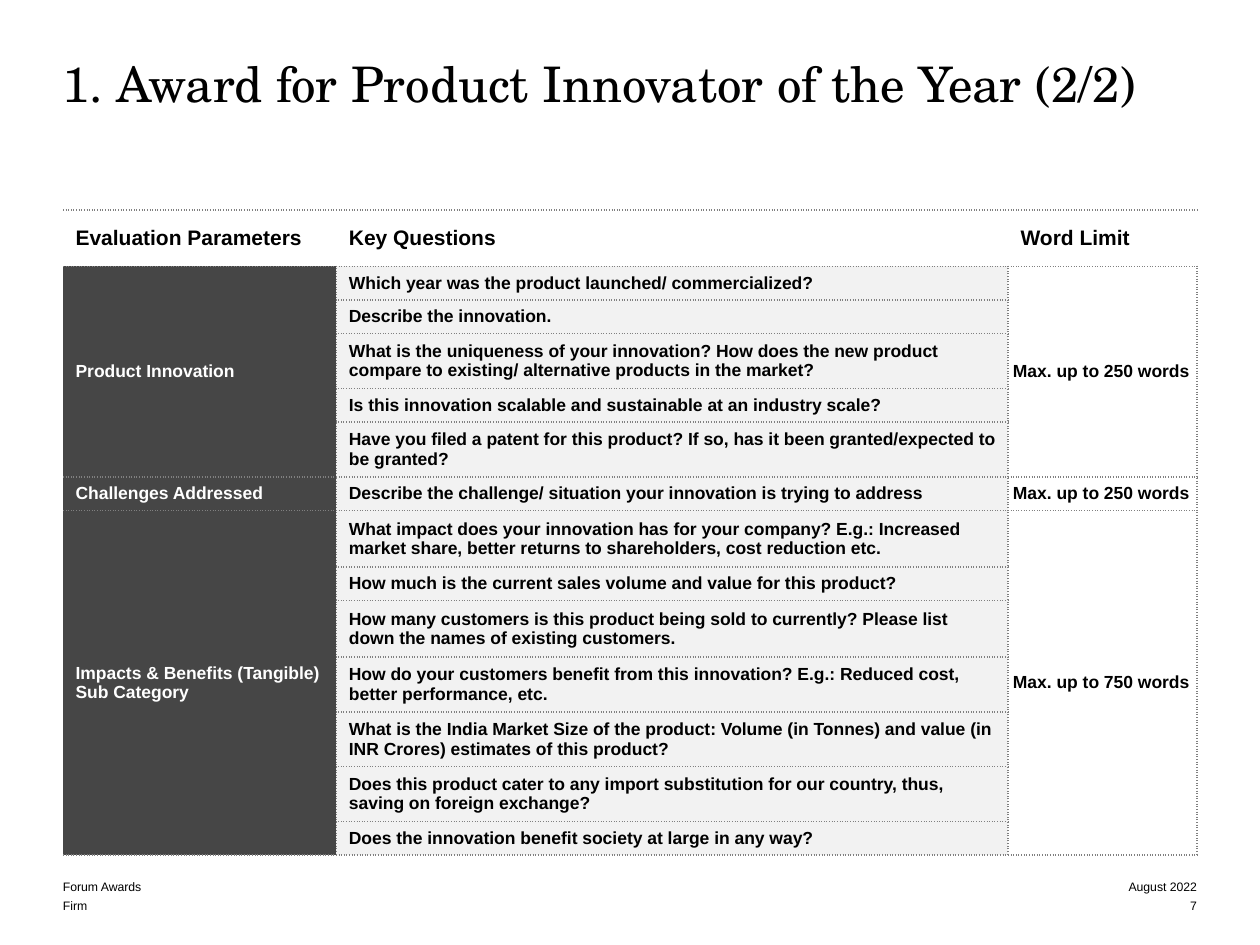
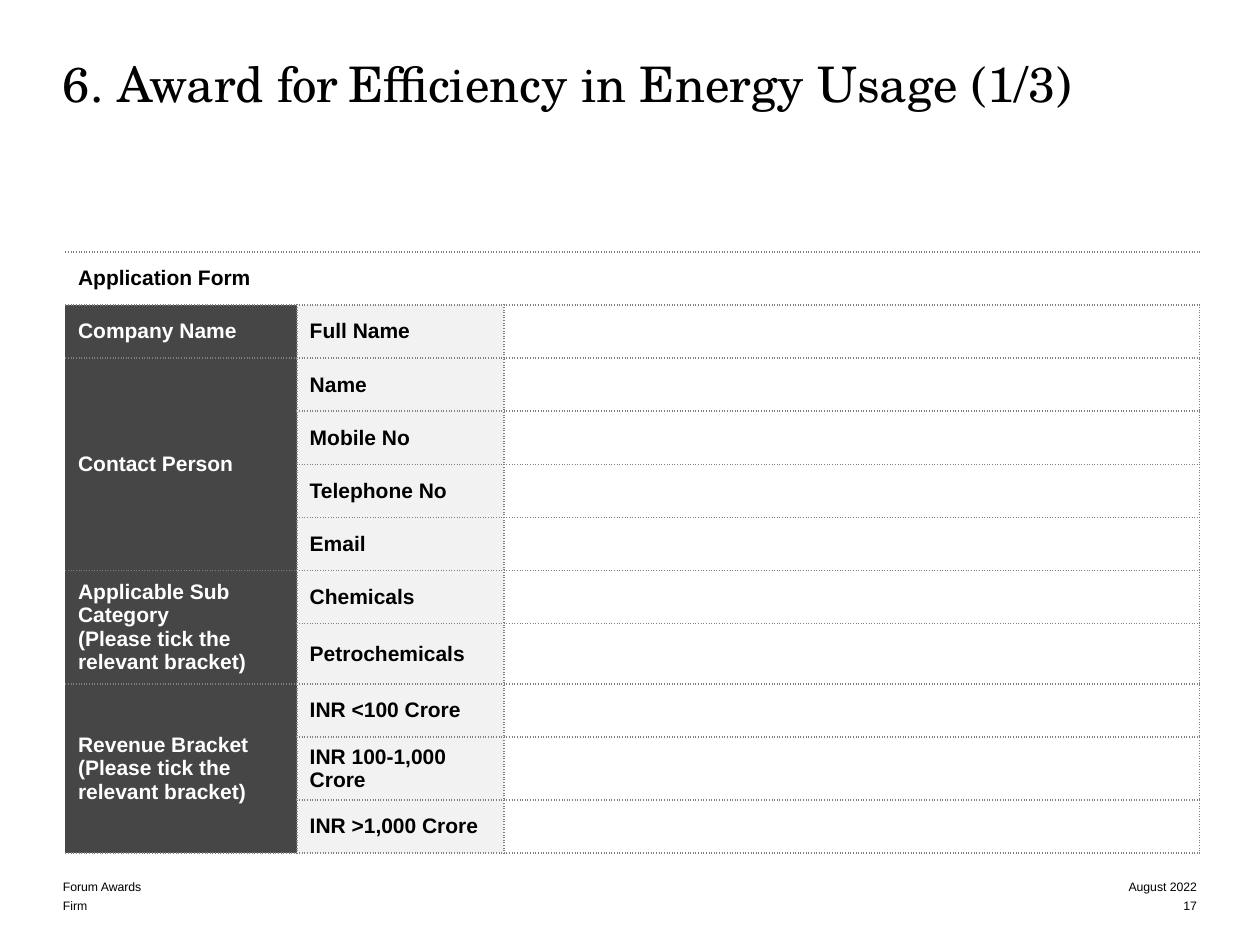
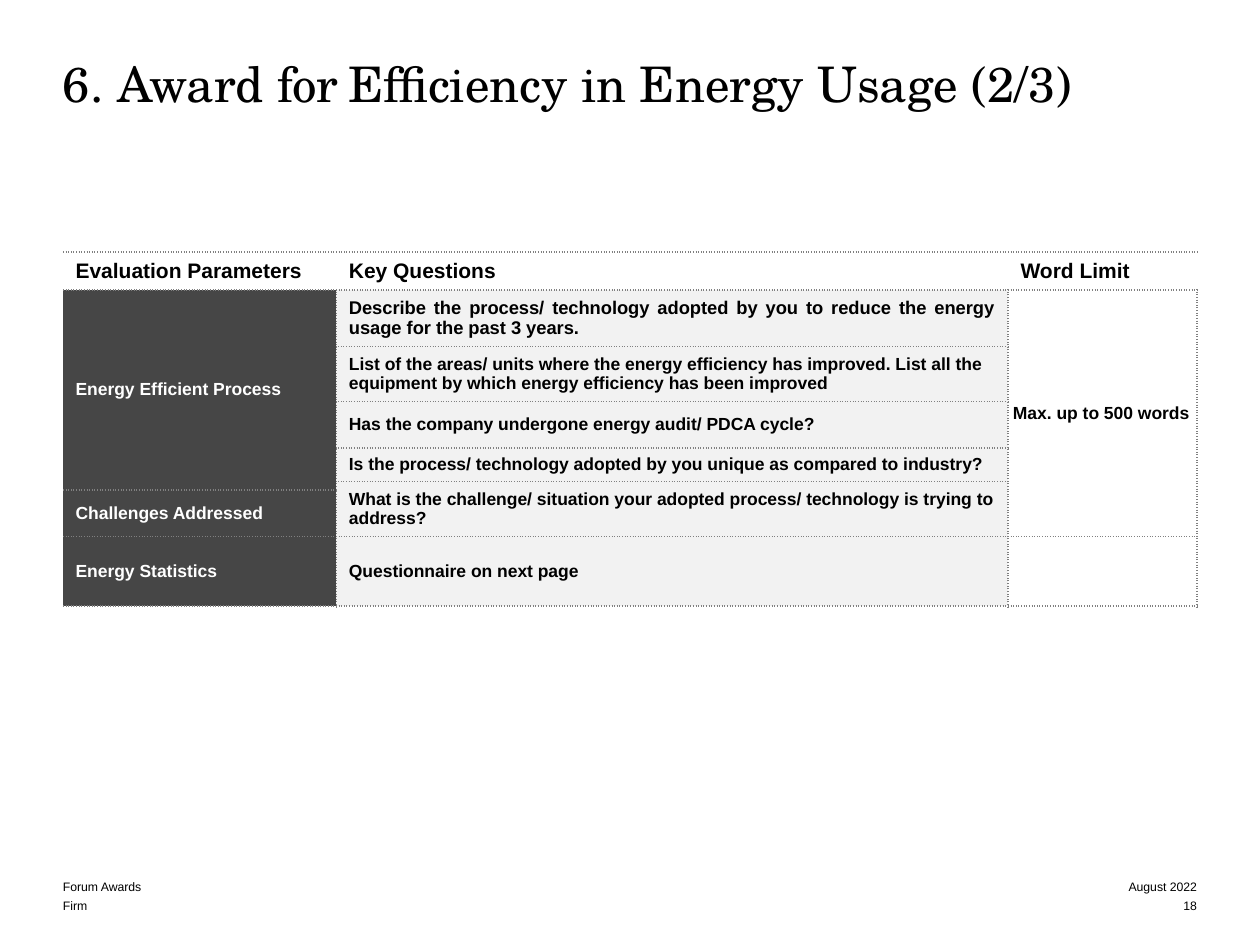
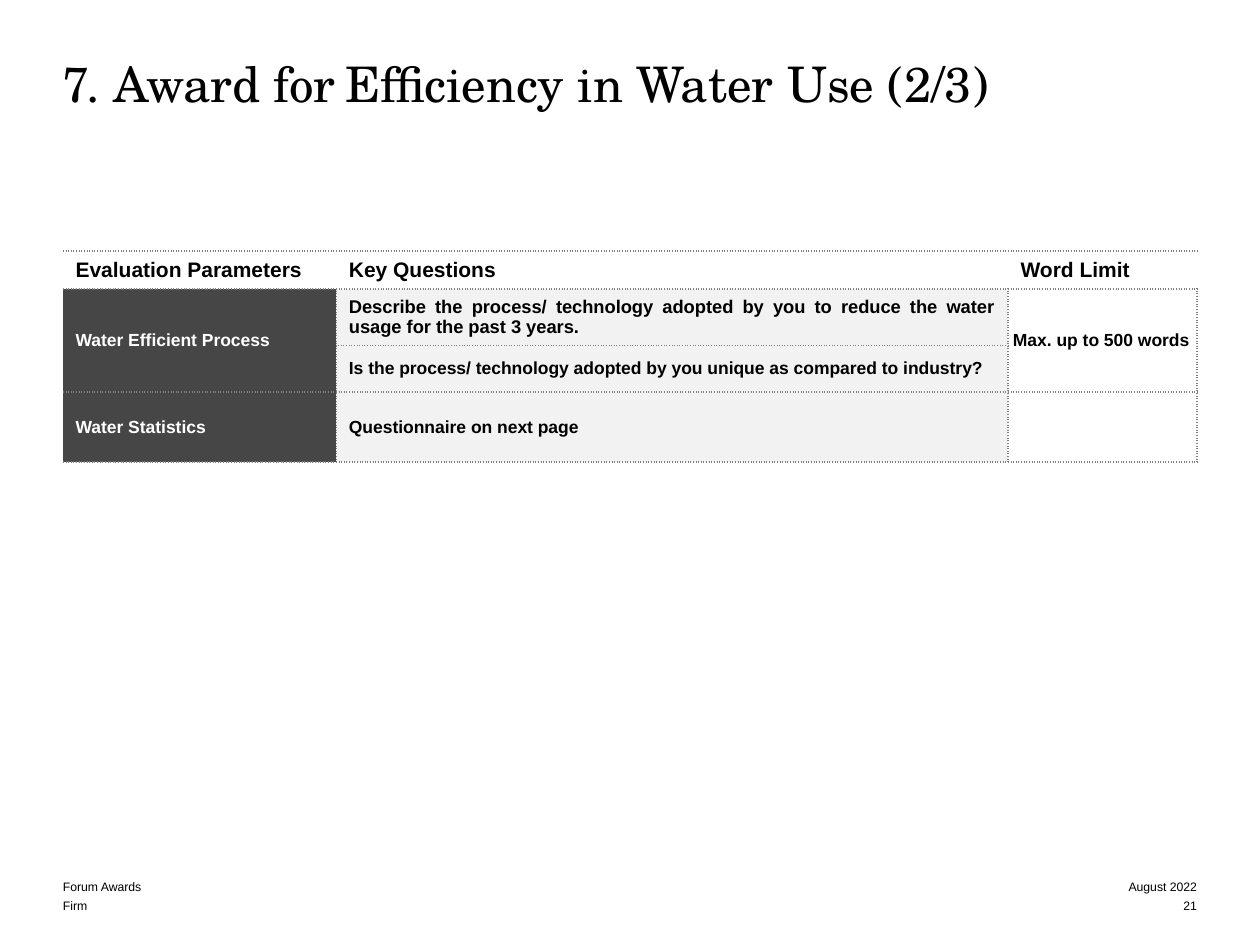
from pptx import Presentation
from pptx import util as u
from pptx.dml import color
from pptx.enum import text as t
from pptx.oxml import ns
from lxml import etree

INK, WHITE, DARK, PALE, RULE = "000000", "FFFFFF", "464646", "F2F2F2", "808080"
SANS, SERIF = "Arial", "TeX Gyre Schola"
LEFT, WIDTH = 1.27, 22.86
ASK_COLS = (5.51, 13.54, 3.81)
FORM_COLS = (4.67, 4.17, 14.02)
ASK_HEAD = ("Evaluation Parameters", "Key Questions", "Word Limit")
ONE, TWO, TALL = 0.65, 1.04, 1.14  # row heights: one line, two lines, roomy
TICK = "\n(Please tick the relevant bracket)"


def tint(code):
    return color.RGBColor.from_string(code)


def style(run, size, ink=INK, face=SANS, bold=False):
    font = run.font
    font.size, font.name, font.bold = u.Pt(size), face, bold
    font.color.rgb = tint(ink)


def add_box(slide, left, top, width, height):
    frame = slide.shapes.add_textbox(
        u.Cm(left), u.Cm(top), u.Cm(width), u.Cm(height)).text_frame
    frame.margin_left = frame.margin_right = 0
    frame.margin_top = frame.margin_bottom = 0
    frame.word_wrap = True
    return frame


def add_title(slide, parts, width, height):
    """Write the title; its parts are joined by a narrow space."""
    para = add_box(slide, LEFT, 1.27, width, height).paragraphs[0]
    para.line_spacing = 0.85
    for num, part in enumerate(parts):
        if num:
            gap = para.add_run()
            gap.text = " "
            style(gap, 20, face=SERIF)
        run = para.add_run()
        run.text = part
        style(run, 28, face=SERIF)


def add_footer(slide, page):
    right = LEFT + WIDTH - 3.56
    for row, pair in enumerate((("Forum Awards", "August 2022"),
                                ("Firm", str(page)))):
        top = 17.65 + row * 0.38
        for words, left, width, align in (
                (pair[0], LEFT, 11.05, t.PP_ALIGN.LEFT),
                (pair[1], right, 3.56, t.PP_ALIGN.RIGHT)):
            frame = add_box(slide, left, top, width, 0.38)
            frame.vertical_anchor = t.MSO_ANCHOR.BOTTOM
            frame.text = words
            para = frame.paragraphs[0]
            para.alignment = align
            style(para.runs[0], 7)


def set_edges(cell, sides):
    """Draw dotted rules on the given sides and clear the others."""
    props = cell._tc.get_or_add_tcPr()
    for num, side in enumerate("LRTB"):
        line = etree.Element(ns.qn("a:ln" + side), w=str(u.Pt(1)))
        if side in sides:
            fill = etree.SubElement(line, ns.qn("a:solidFill"))
            etree.SubElement(fill, ns.qn("a:srgbClr"), val=RULE)
            etree.SubElement(line, ns.qn("a:prstDash"), val="sysDot")
        else:
            etree.SubElement(line, ns.qn("a:noFill"))
        props.insert(num, line)


def fill_cell(cell, words, size, ink, back, sides):
    cell.fill.solid()
    cell.fill.fore_color.rgb = tint(back)
    set_edges(cell, sides)
    cell.vertical_anchor = t.MSO_ANCHOR.MIDDLE
    cell.text_frame.text = words or ""
    for para in cell.text_frame.paragraphs:
        for run in para.runs:
            style(run, size, ink, bold=True)
        if not para.runs:
            etree.SubElement(para._p, ns.qn("a:endParaRPr"),
                             sz=str(size * 100))


def add_grid(slide, left, top, cols, heights, rows, size):
    """Build a table in which None joins a cell to the one above it."""
    grid = slide.shapes.add_table(
        len(rows), len(cols), u.Cm(left), u.Cm(top),
        u.Cm(sum(cols)), u.Cm(sum(heights))).table
    grid.first_row = grid.horz_banding = False
    for col, width in zip(grid.columns, cols):
        col.width = u.Cm(width)
    for row, height in zip(grid.rows, heights):
        row.height = u.Cm(height)
    looks = ((WHITE, DARK, "RTB"), (INK, PALE, "LRTB"), (INK, WHITE, "LRTB"))
    for y, row in enumerate(rows):
        for x, words in enumerate(row):
            if y == 0:
                fill_cell(grid.cell(y, x), words, 12, INK, WHITE, "TB")
            else:
                fill_cell(grid.cell(y, x), words, size, *looks[x])
    for x in range(len(cols)):
        starts = [y for y, row in enumerate(rows) if row[x] is not None]
        for y, end in zip(starts, starts[1:] + [len(rows)]):
            if end - y > 1:
                grid.cell(y, x).merge(grid.cell(end - 1, x))
    return grid


def ask_slide(slide, title, size, page, top, heights, rows, just=()):
    """Key questions slide; rows in just are justified, the first enlarged."""
    add_title(slide, title, *size)
    add_footer(slide, page)
    grid = add_grid(slide, LEFT, top, ASK_COLS, heights,
                    [ASK_HEAD] + rows, 10)
    for y in range(len(rows) + 1):
        cell = grid.cell(y, 2)
        cell.text_frame.paragraphs[0].space_after = u.Pt(3)
        if y and cell.text_frame.text:
            cell.margin_left = cell.margin_right = u.Cm(0.1)
            cell.margin_top = cell.margin_bottom = u.Cm(0.1)
    for y in just:
        para = grid.cell(y, 1).text_frame.paragraphs[0]
        para.alignment = t.PP_ALIGN.JUSTIFY
        if y == 1:
            para.runs[0].font.size = u.Pt(10.5)


def form_slide(slide, title, size, page, top, groups):
    add_title(slide, title, *size)
    add_footer(slide, page)
    rows = [("Application Form", "", "")]
    for label, fields in groups:
        for num, field in enumerate(fields):
            rows.append((None if num else label, field, ""))
    heights = [1.07] * len(rows)
    heights[-2] = 1.2
    grid = add_grid(slide, LEFT + 0.05, top, FORM_COLS, heights, rows, 12)
    grid.cell(0, 0).merge(grid.cell(0, 2))


PRODUCT = [
    ("Product Innovation",
     "Which year was the product launched/ commercialized?",
     "Max. up to 250 words"),
    (None, "Describe the innovation.", None),
    (None, "What is the uniqueness of your innovation? How does the new "
     "product compare to existing/ alternative products in the market?", None),
    (None, "Is this innovation scalable and sustainable at an industry "
     "scale?", None),
    (None, "Have you filed a patent for this product? If so, has it been "
     "granted/expected to be granted?", None),
    ("Challenges Addressed", "Describe the challenge/ situation your "
     "innovation is trying to address", "Max. up to 250 words"),
    ("Impacts & Benefits (Tangible)\nSub Category",
     "What impact does your innovation has for your company? E.g.: Increased "
     "market share, better returns to shareholders, cost reduction etc.",
     "Max. up to 750 words"),
    (None, "How much is the current sales volume and value for this "
     "product?", None),
    (None, "How many customers is this product being sold to currently? "
     "Please list down the names of existing customers.", None),
    (None, "How do your customers benefit from this innovation? E.g.: "
     "Reduced cost, better performance, etc.", None),
    (None, "What is the India Market Size of the product: Volume (in Tonnes) "
     "and value (in INR Crores) estimates of this product?", None),
    (None, "Does this product cater to any import substitution for our "
     "country, thus, saving on foreign exchange?", None),
    (None, "Does the innovation benefit society at large in any way?", None),
]
FORM = [
    ("Company Name", ["Full Name"]),
    ("Contact Person", ["Name", "Mobile No", "Telephone No", "Email"]),
    ("Applicable Sub Category" + TICK, ["Chemicals", "Petrochemicals"]),
    ("Revenue Bracket" + TICK,
     ["INR <100 Crore", "INR 100-1,000 Crore", "INR >1,000 Crore"]),
]
ADOPT = ("Describe the process/ technology adopted by you to reduce the {} "
         "usage for the past 3 years.")
UNIQUE = ("Is the process/ technology adopted by you unique as compared to "
          "industry?")
NEXT = "Questionnaire on next page"
ENERGY = [
    ("Energy Efficient Process", ADOPT.format("energy"),
     "Max. up to 500 words"),
    (None, "List of the areas/ units where the energy efficiency has "
     "improved. List all the equipment by which energy efficiency has been "
     "improved", None),
    (None, "Has the company undergone energy audit/ PDCA cycle?", None),
    (None, UNIQUE, None),
    (None, "What is the challenge/ situation your adopted process/ "
     "technology is trying to address?", None),
    ("Challenges Addressed", None, None),
    ("Energy Statistics", NEXT, ""),
]
WATER = [
    ("Water Efficient Process", ADOPT.format("water"),
     "Max. up to 500 words"),
    (None, UNIQUE, None),
    ("Water Statistics", NEXT, ""),
]


def main():
    deck = Presentation()
    deck.slide_width, deck.slide_height = u.Cm(25.4), u.Cm(19.05)

    def new():
        return deck.slides.add_slide(deck.slide_layouts[6])

    ask_slide(new(), ["1. Award for Product Innovator of the Year (2/2)"],
              (WIDTH, 3.81), 7, 4.23,
              [TALL, ONE, ONE, TWO, ONE, TWO, ONE, TALL, ONE, TALL,
               TWO, TWO, TWO, ONE], PRODUCT)
    form_slide(new(), ["6. Award for", "Efficiency in Energy Usage (1/3)"],
               (22.02, 2.11), 17, 5.08, FORM)
    ask_slide(new(), ["6. Award for", "Efficiency in Energy Usage (2/3)"],
              (WIDTH, 3.81), 18, 5.08,
              [0.73, 1.08, TWO, 0.94, ONE, 0.17, 0.87, 1.41], ENERGY, (1, 7))
    ask_slide(new(), ["7. Award for", "Efficiency in Water Use (2/3)"],
              (22.43, 1.91), 21, 5.06,
              [0.73, 1.08, 0.94, 1.41], WATER, (1, 2, 3))
    deck.save("out.pptx")


if __name__ == "__main__":
    main()
